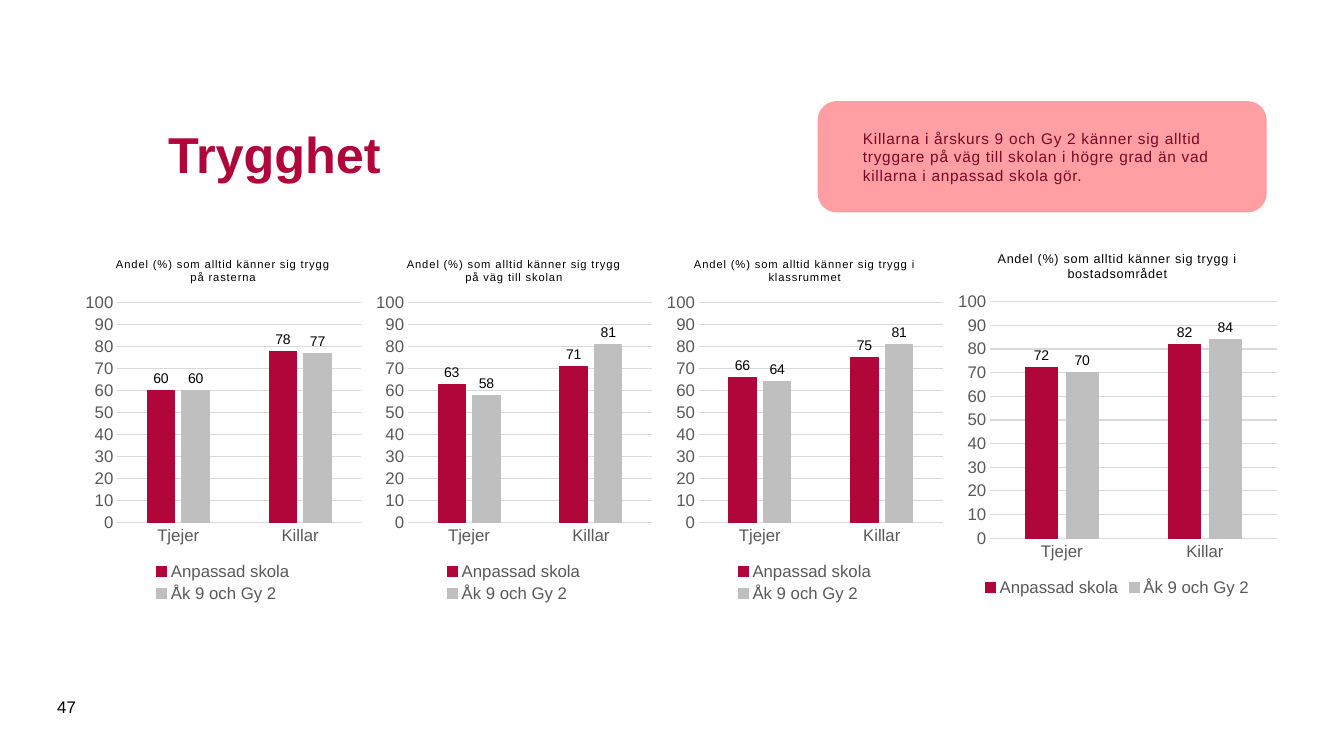
"""Build the slide Trygghet with four clustered column charts."""
from lxml import etree
from pptx import Presentation
from pptx.chart.data import CategoryChartData
from pptx.dml.color import RGBColor
from pptx.enum.chart import XL_CHART_TYPE, XL_LABEL_POSITION, XL_LEGEND_POSITION, XL_TICK_MARK
from pptx.enum.shapes import MSO_SHAPE
from pptx.enum.text import MSO_ANCHOR, PP_ALIGN
from pptx.oxml.ns import qn
from pptx.util import Pt

COLUMNS = XL_CHART_TYPE.COLUMN_CLUSTERED
OUTSIDE_END = XL_LABEL_POSITION.OUTSIDE_END
BOTTOM = XL_LEGEND_POSITION.BOTTOM
NO_TICK = XL_TICK_MARK.NONE
ROUNDED = MSO_SHAPE.ROUNDED_RECTANGLE
MIDDLE = MSO_ANCHOR.MIDDLE
LEFT = PP_ALIGN.LEFT

FONT = "Arial"
NUMBER_FORMAT = "#,##0;#,##0"
COLORS = {
    "crimson": "B1063A", "silver": "BFBFBF", "grid": "D9D9D9", "axis": "595959",
    "black": "000000", "pink": "FF9DA2", "wine": "790726",
}

TITLE = "Trygghet"
PAGE_NUMBER = "47"
MESSAGE = ("Killarna i årskurs 9 och Gy 2 känner sig alltid tryggare på väg till skolan "
           "i högre grad än vad killarna i anpassad skola gör.")
QUESTION = "Andel (%) som alltid känner sig trygg "
CATEGORIES = ["Tjejer", "Killar"]
SERIES = [("Anpassad skola", "crimson"), ("Åk 9 och Gy 2", "silver")]
PLACES = [
    ("på rasterna", [(60, 78), (60, 77)]),
    ("på väg till skolan", [(63, 71), (58, 81)]),
    ("i klassrummet", [(66, 75), (64, 81)]),
    ("i bostadsområdet", [(72, 82), (70, 84)]),
]

CHART_LEFT, CHART_TOP, CHART_PITCH = 56.9, 172.8, 207.7
CHART_WIDTH, CHART_HEIGHT = 205.2, 260.6
LAST_CHART = (679.7, 168.5, 236.9, CHART_HEIGHT)


def rgb(name):
    return RGBColor.from_string(COLORS[name])


def set_font(font, size, color, bold=False):
    font.name, font.size, font.bold = FONT, Pt(size), bold
    font.color.rgb = rgb(color)


def set_line(line, color, width=0.75):
    line.color.rgb = rgb(color)
    line.width = Pt(width)


def write(frame, text, size, color, bold=False, spacing=0):
    paragraph = frame.paragraphs[0]
    run = paragraph.add_run()
    run.text = text
    set_font(paragraph.font, size, color, bold)
    if spacing:
        run._r.get_or_add_rPr().set("spc", str(round(spacing * 100)))
    return paragraph


def add_text(slide, box, text, size, color, bold=False):
    frame = slide.shapes.add_textbox(*map(Pt, box)).text_frame
    frame.word_wrap = True
    frame.vertical_anchor = MIDDLE
    write(frame, text, size, color, bold)


def style_axes(chart):
    for axis in (chart.category_axis, chart.value_axis):
        axis.major_tick_mark = axis.minor_tick_mark = NO_TICK
        set_font(axis.tick_labels.font, 12, "axis")
    set_line(chart.category_axis.format.line, "grid")
    values = chart.value_axis
    values.minimum_scale, values.maximum_scale, values.major_unit = 0, 100, 10
    values.format.line.fill.background()
    set_line(values.major_gridlines.format.line, "grid")
    values.tick_labels.number_format = NUMBER_FORMAT
    values.tick_labels.number_format_is_linked = False


def style_series(plot):
    plot.gap_width, plot.overlap, plot.vary_by_categories = 219, -27, False
    for series, (_, color) in zip(plot.series, SERIES):
        series.format.fill.solid()
        series.format.fill.fore_color.rgb = rgb(color)
        set_line(series.format.line, color)
        labels = series.data_labels
        labels.show_value = True
        labels.position = OUTSIDE_END
        labels.number_format = NUMBER_FORMAT
        labels.number_format_is_linked = False
        set_font(labels.font, 10, "black")


def add_chart(slide, box, place, rows, title_size):
    data = CategoryChartData()
    data.categories = CATEGORIES
    for (name, _), values in zip(SERIES, rows):
        data.add_series(name, values)
    chart = slide.shapes.add_chart(COLUMNS, *map(Pt, box), data).chart
    set_font(chart.font, 10, "black")
    write(chart.chart_title.text_frame, QUESTION + place, title_size, "black", spacing=0.5)
    chart.chart_title.include_in_layout = False
    chart.has_legend = True
    chart.legend.position = BOTTOM
    chart.legend.include_in_layout = False
    set_font(chart.legend.font, 12, "axis")
    style_axes(chart)
    style_series(chart.plots[0])


def add_message(slide):
    shape = slide.shapes.add_shape(ROUNDED, Pt(584.6), Pt(72.7), Pt(319.7), Pt(78.5))
    shape.shadow.inherit = False
    shape.fill.solid()
    shape.fill.fore_color.rgb = rgb("pink")
    fill_color = shape._element.spPr.find(qn("a:solidFill"))[0]
    etree.SubElement(fill_color, qn("a:alpha")).set("val", "98000")
    set_line(shape.line, "pink", 1)
    frame = shape.text_frame
    frame.word_wrap = True
    frame.vertical_anchor = MIDDLE
    frame.margin_left = frame.margin_right = Pt(28)
    frame.margin_top = frame.margin_bottom = Pt(14.4)
    write(frame, MESSAGE, 11, "wine", spacing=0.5).alignment = LEFT


def main():
    presentation = Presentation()
    presentation.slide_width, presentation.slide_height = Pt(960), Pt(540)
    slide = presentation.slides.add_slide(presentation.slide_layouts[6])
    for index, (place, rows) in enumerate(PLACES[:-1]):
        left = CHART_LEFT + index * CHART_PITCH
        add_chart(slide, (left, CHART_TOP, CHART_WIDTH, CHART_HEIGHT), place, rows, 8)
    add_text(slide, (113, 58.3, 737.3, 102.2), TITLE, 36, "crimson", bold=True)
    add_text(slide, (33.8, 490.3, 41, 28.8), PAGE_NUMBER, 12, "black")
    add_chart(slide, LAST_CHART, *PLACES[-1], 9)
    add_message(slide)
    presentation.save("out.pptx")


if __name__ == "__main__":
    main()
